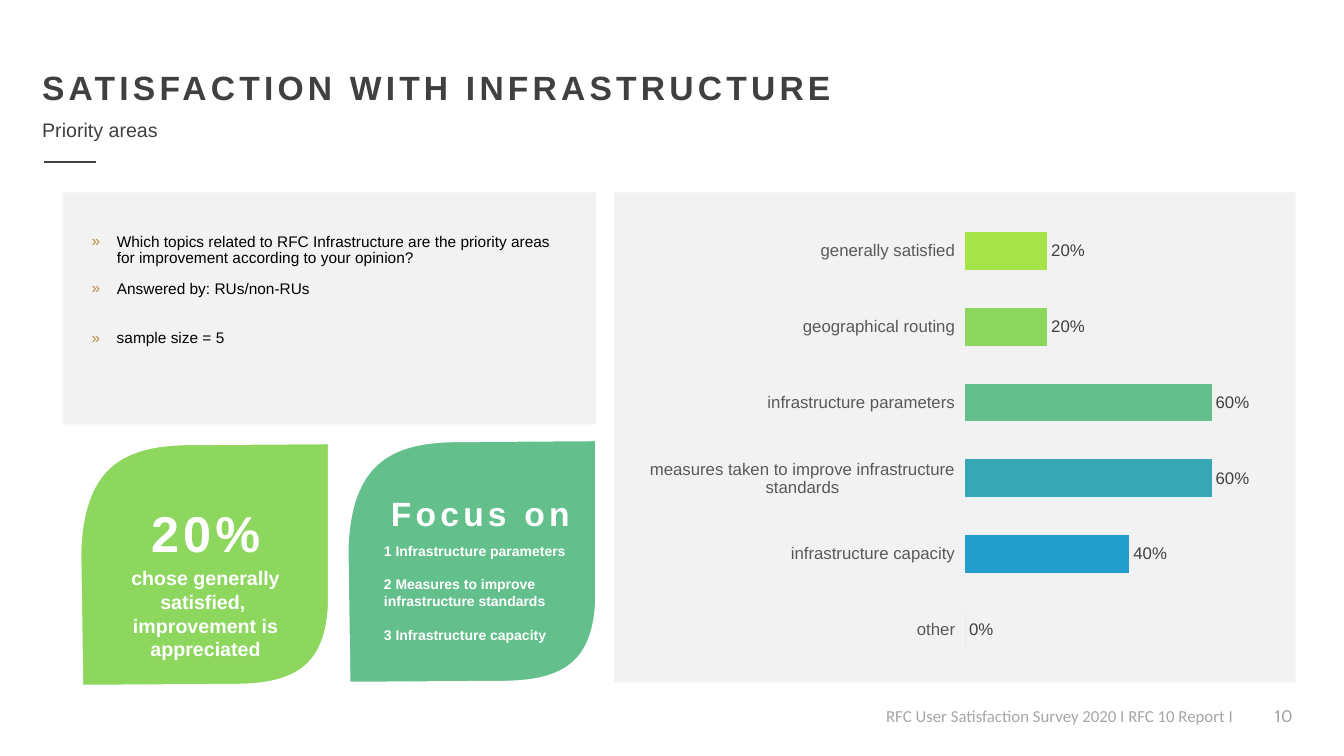
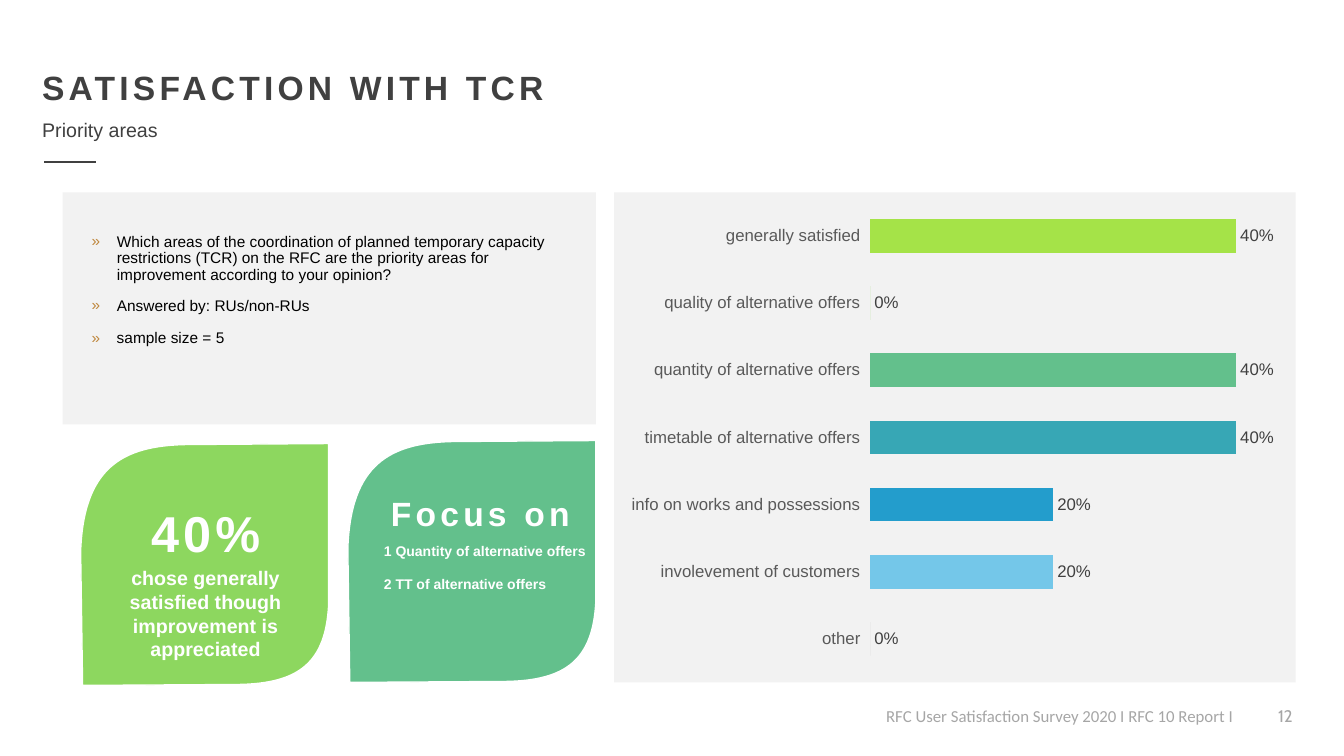
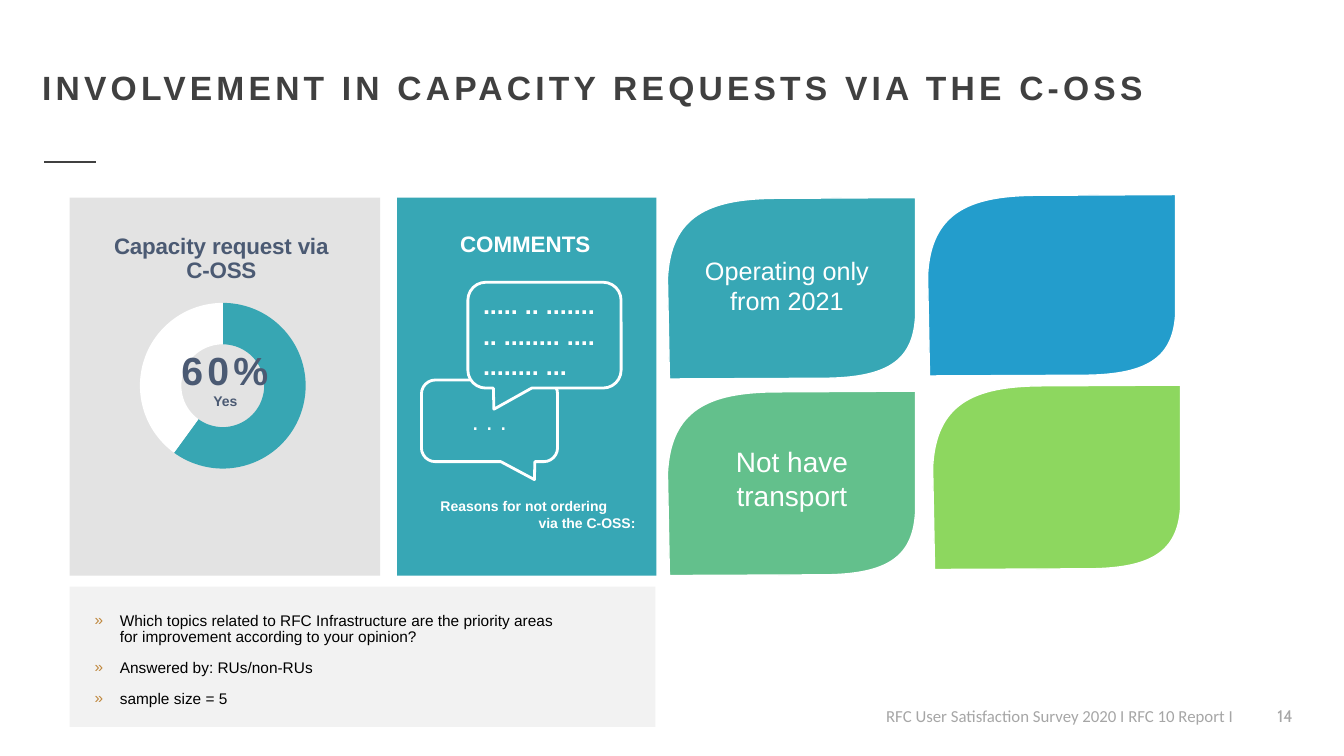
from dataclasses import dataclass

from lxml import etree
from pptx import Presentation
from pptx import util as u
from pptx.chart.data import CategoryChartData
from pptx.dml.color import RGBColor
from pptx.enum import chart as charts, shapes, text
from pptx.oxml import parse_xml
from pptx.oxml.ns import nsdecls, qn

PX = 9144


@dataclass(frozen=True)
class Theme:
    font: str = "Arial"
    footer_font: str = "Calibri"
    number_font: str = "Cabin"
    white: str = "FFFFFF"
    black: str = "000000"
    ink: str = "404040"
    axis: str = "595959"
    muted: str = "A6A6A6"
    slate: str = "4B5A73"
    panel: str = "F2F2F2"
    grey_panel: str = "E3E3E3"
    bullet: str = "BF873D"
    lime: str = "A5E348"
    green: str = "8DD75F"
    jade: str = "63C08C"
    teal: str = "37A7B5"
    blue: str = "239DCC"
    sky: str = "74C7E9"
    silver: str = "BFBFBF"
    yes: str = "37A6B3"
    huge: int = 36
    big: int = 28
    title: int = 24
    note: int = 20
    comment: int = 18
    heading: int = 16
    body: int = 14
    label: int = 12
    bullet_size: int = 11
    small: int = 10


THEME = Theme()
LEFT = text.PP_ALIGN.LEFT
CENTER = text.PP_ALIGN.CENTER
RIGHT = text.PP_ALIGN.RIGHT
FOOTER = "RFC User Satisfaction Survey 2020 I RFC 10 Report I"
ANSWERED_BY = "Answered by: RUs/non-RUs"
SAMPLE = "sample size = 5"
INFRASTRUCTURE_QUESTION = (
    "Which topics related to RFC Infrastructure are the priority areas "
    "for improvement according to your opinion?"
)

PRIORITY_SLIDES = [
    {
        "number": 10,
        "title": "SATISFACTION WITH INFRASTRUCTURE",
        "title_width": 844,
        "question": INFRASTRUCTURE_QUESTION,
        "share": "20%",
        "verdict": "chose generally satisfied, \vimprovement is appreciated",
        "focus": [
            "1 Infrastructure parameters",
            "2 Measures to improve\vinfrastructure standards",
            "3 Infrastructure capacity",
        ],
        "focus_box": (371, 533, 202, 111),
        "chart_box": (632, 202, 623, 470),
        "axis_max": 0.7,
        "bars": [
            ("generally satisfied", 0.2, THEME.lime),
            ("geographical routing", 0.2, THEME.green),
            ("infrastructure parameters", 0.6, THEME.jade),
            ("measures taken to improve infrastructure standards", 0.6, THEME.teal),
            ("infrastructure capacity", 0.4, THEME.blue),
            ("other", 0, THEME.silver),
        ],
    },
    {
        "number": 12,
        "title": "SATISFACTION WITH TCR",
        "title_width": 1167,
        "question": "Which areas of the coordination of planned temporary capacity "
                    "restrictions (TCR) on the RFC are the priority areas for "
                    "improvement according to your opinion?",
        "share": "40%",
        "verdict": "chose generally satisfied though improvement is appreciated",
        "focus": ["1 Quantity of alternative offers", "2 TT of alternative offers"],
        "focus_box": (371, 533, 222, 77),
        "chart_box": (613, 191, 672, 486),
        "axis_max": 0.45,
        "bars": [
            ("generally satisfied", 0.4, THEME.lime),
            ("quality of alternative offers", 0, THEME.green),
            ("quantity of alternative offers", 0.4, THEME.jade),
            ("timetable of alternative offers", 0.4, THEME.teal),
            ("info on works and possessions", 0.2, THEME.blue),
            ("involevement of customers", 0.2, THEME.sky),
            ("other", 0, THEME.silver),
        ],
    },
]

INVOLVEMENT = {
    "number": 14,
    "title": "INVOLVEMENT IN CAPACITY REQUESTS VIA THE C-OSS",
    "title_width": 1213,
    "doughnut_title": "Capacity request via\nC-OSS",
    "answers": [("1", 60, THEME.yes), ("2", 40, THEME.white)],
    "leaves": [
        ((925, 382, 246, 183), THEME.green),
        ((662, 388, 246, 183), THEME.jade),
        ((662, 196, 246, 180), THEME.teal),
        ((920, 193, 246, 180), THEME.blue),
    ],
    "reasons": [
        ("Not have transport", (671, 436, 229, 77), THEME.note),
        ("Operating only from 2021", (666, 248, 229, 71), THEME.comment),
    ],
    "callouts": [
        (". . .", (418, 377, 135, 81), (0.33, 0.72, 0.17), CENTER, False),
        ("..... .. .......\v.. ........ ....\v........ ...",
         (464, 280, 152, 105), (-0.33, 0.7, 0.17), LEFT, True),
    ],
}

LEAF_UNIT = 1000
LEAF_OUTLINE = [
    (8, 1000), (0, 446), (12, 100), (167, 8), (429, 4),
    (1000, 0), (1000, 667), (988, 904), (882, 992), (637, 996),
]
LEAF_CURVE_STARTS = (1, 6)


def emu(box):
    return [value * PX for value in box]


def color(value):
    return RGBColor.from_string(value)


def style_font(font, size, shade, bold=False, name=THEME.font):
    font.name = name
    font.size = u.Pt(size)
    font.bold = bold
    font.color.rgb = color(shade)


def write(frame, lines, size, shade, bold=False, align=None, name=THEME.font,
          tracking=0, gap=0, leading=None):
    for index, line in enumerate(lines):
        paragraph = frame.paragraphs[0] if index == 0 else frame.add_paragraph()
        paragraph.text = line
        paragraph.alignment = align
        if leading:
            paragraph.line_spacing = leading
        if gap and index:
            paragraph.space_before = u.Pt(gap)
        style_font(paragraph.font, size, shade, bold, name)
        if tracking:
            paragraph.font._rPr.set("spc", str(tracking * 100))


def add_text(slide, box, lines, size, shade, wrap=True, **options):
    frame = slide.shapes.add_textbox(*emu(box)).text_frame
    frame.word_wrap = wrap
    write(frame, lines, size, shade, **options)
    return frame


def add_bullets(slide, box, lines):
    frame = add_text(slide, box, lines, THEME.bullet_size, THEME.black, leading=0.9)
    for paragraph in frame.paragraphs:
        paragraph.space_before = u.Pt(10)
        properties = paragraph._p.get_or_add_pPr()
        properties.set("marL", str(25 * PX))
        properties.set("indent", str(-25 * PX))
        defaults = properties.find(qn("a:defRPr"))
        for xml in (
            f'<a:buClr {nsdecls("a")}><a:srgbClr val="{THEME.bullet}"/></a:buClr>',
            f'<a:buFont {nsdecls("a")} typeface="{THEME.font}"/>',
            f'<a:buChar {nsdecls("a")} char="»"/>',
        ):
            defaults.addprevious(parse_xml(xml))


def paint(shape, fill, line=None, width=1):
    shape.shadow.inherit = False
    shape.fill.solid()
    shape.fill.fore_color.rgb = color(fill)
    if line:
        shape.line.color.rgb = color(line)
        shape.line.width = u.Pt(width)
    else:
        shape.line.fill.background()


def add_panel(slide, box, fill):
    paint(slide.shapes.add_shape(shapes.MSO_SHAPE.RECTANGLE, *emu(box)), fill)


def add_leaf(slide, box, fill):
    left, top, width, height = emu(box)
    turned_left = left + (width - height) / 2
    turned_top = top + (height - width) / 2
    points = [(turned_left + (1 - y / LEAF_UNIT) * height,
               turned_top + x / LEAF_UNIT * width) for x, y in LEAF_OUTLINE]
    builder = slide.shapes.build_freeform(*points[0])
    builder.add_line_segments(points[1:], close=True)
    leaf = builder.convert_to_shape()
    segments = list(leaf._element.iter(qn("a:lnTo")))
    for start in LEAF_CURVE_STARTS:
        controls = segments[start:start + 3]
        curve = etree.Element(qn("a:cubicBezTo"))
        controls[0].addprevious(curve)
        for segment in controls:
            curve.append(segment[0])
            segment.getparent().remove(segment)
    leaf.rotation = 270
    paint(leaf, fill, THEME.white)


def add_chart(slide, kind, box, rows, number_format):
    data = CategoryChartData(number_format=number_format)
    data.categories = [name for name, _, _ in rows]
    data.add_series("Series 1", [value for _, value, _ in rows])
    chart = slide.shapes.add_chart(kind, *emu(box), data).chart
    chart.has_legend = False
    chart.has_title = False
    style_font(chart.font, THEME.small, THEME.black)
    plot = chart.plots[0]
    plot.vary_by_categories = False
    for index, (_, _, shade) in enumerate(rows):
        fill = plot.series[0].points[index].format.fill
        fill.solid()
        fill.fore_color.rgb = color(shade)
    return chart


def add_bar_chart(slide, box, rows, axis_max):
    chart = add_chart(slide, charts.XL_CHART_TYPE.BAR_CLUSTERED, box, rows, "0%")
    plot = chart.plots[0]
    plot.gap_width = 100
    plot.has_data_labels = True
    labels = plot.data_labels
    labels.show_value = True
    labels.position = charts.XL_LABEL_POSITION.OUTSIDE_END
    labels.number_format = "0%"
    labels.number_format_is_linked = False
    style_font(labels.font, THEME.label, THEME.ink)
    categories = chart.category_axis
    categories.reverse_order = True
    categories.format.line.fill.background()
    style_font(categories.tick_labels.font, THEME.label, THEME.axis)
    values = chart.value_axis
    values.has_major_gridlines = False
    values.minimum_scale = 0
    values.maximum_scale = axis_max
    values.visible = False


def set_layout(parent, before, inner=False, **fractions):
    for old in parent.findall(qn("c:layout")):
        parent.remove(old)
    layout = etree.Element(qn("c:layout"))
    manual = etree.SubElement(layout, qn("c:manualLayout"))
    settings = {"layoutTarget": "inner"} if inner else {}
    settings.update(xMode="edge", yMode="edge", **fractions)
    for name, value in settings.items():
        etree.SubElement(manual, qn(f"c:{name}")).set("val", str(value))
    parent.find(qn(before)).addprevious(layout)


def add_doughnut(slide, box, title, rows):
    chart = add_chart(slide, charts.XL_CHART_TYPE.DOUGHNUT, box, rows, "General")
    chart.has_title = True
    write(chart.chart_title.text_frame, title.split("\n"), THEME.heading,
          THEME.slate, bold=True)
    chart.chart_title.include_in_layout = False
    set_layout(chart.chart_title._element, "c:overlay", x=0.14, y=0.04)
    doughnut = chart.plots[0]._element
    doughnut.find(qn("c:holeSize")).set("val", "90")
    set_layout(doughnut.getparent(), "c:doughnutChart", inner=True,
               x=0.23, y=0.32, w=0.54, h=0.63)


def add_slide(presentation, content):
    slide = presentation.slides.add_slide(presentation.slide_layouts[6])
    add_text(slide, (1230, 695, 62, 40), [str(content["number"])], THEME.label,
             THEME.muted, align=RIGHT, name=THEME.number_font)
    add_text(slide, (869, 695, 385, 30), [FOOTER], THEME.label, THEME.muted,
             wrap=False, name=THEME.footer_font)
    rule = slide.shapes.add_connector(
        shapes.MSO_CONNECTOR.STRAIGHT, *emu((44, 161, 95, 161)))
    rule.line.color.rgb = color(THEME.ink)
    rule.line.width = u.Pt(1.5)
    etree.SubElement(rule._element.spPr, qn("a:effectLst"))
    add_text(slide, (32, 61, content["title_width"], 50), [content["title"]],
             THEME.title, THEME.ink, bold=True, tracking=3)
    return slide


def add_priority_slide(presentation, content):
    slide = add_slide(presentation, content)
    add_text(slide, (32, 112, 136, 34), ["Priority areas"], THEME.body, THEME.ink,
             wrap=False)
    add_panel(slide, (62, 191, 529, 230), THEME.panel)
    add_panel(slide, (609, 191, 676, 486), THEME.panel)
    add_bullets(slide, (81, 227, 495, 82), [content["question"], ANSWERED_BY])
    add_bullets(slide, (81, 323, 227, 33), [SAMPLE])
    add_leaf(slide, (80, 440, 246, 240), THEME.green)
    add_leaf(slide, (345, 437, 246, 240), THEME.jade)
    add_text(slide, (137, 493, 134, 71), [content["share"]], THEME.huge, THEME.white,
             wrap=False, bold=True, align=CENTER, tracking=3)
    add_text(slide, (81, 557, 246, 104), [content["verdict"]], THEME.body, THEME.white,
             bold=True, align=CENTER)
    add_text(slide, (375, 484, 203, 50), ["Focus on"], THEME.title, THEME.white,
             wrap=False, bold=True, align=CENTER, tracking=3)
    add_text(slide, content["focus_box"], content["focus"], THEME.small, THEME.white,
             wrap=False, bold=True, gap=12)
    add_bar_chart(slide, content["chart_box"], content["bars"], content["axis_max"])


def add_involvement_slide(presentation, content):
    slide = add_slide(presentation, content)
    add_panel(slide, (69, 196, 308, 375), THEME.grey_panel)
    add_doughnut(slide, (67, 217, 308, 261), content["doughnut_title"],
                 content["answers"])
    add_text(slide, (167, 339, 112, 57), ["60%"], THEME.big, THEME.slate,
             wrap=False, bold=True, align=CENTER, tracking=3)
    add_text(slide, (201, 384, 45, 27), ["Yes"], THEME.small, THEME.slate,
             wrap=False, bold=True, align=CENTER)
    for box, fill in content["leaves"]:
        add_leaf(slide, box, fill)
    for reason, box, size in content["reasons"]:
        add_text(slide, box, [reason], size, THEME.white, align=CENTER)
    add_panel(slide, (394, 196, 257, 375), THEME.teal)
    add_text(slide, (393, 223, 256, 37), ["COMMENTS"], THEME.heading, THEME.white,
             bold=True, align=CENTER)
    for dots, box, adjustments, align, bold in content["callouts"]:
        callout = slide.shapes.add_shape(
            shapes.MSO_SHAPE.ROUNDED_RECTANGULAR_CALLOUT, *emu(box))
        for index, value in enumerate(adjustments):
            callout.adjustments[index] = value
        paint(callout, THEME.teal, THEME.white, 2)
        callout.text_frame.vertical_anchor = text.MSO_ANCHOR.MIDDLE
        write(callout.text_frame, [dots], THEME.comment, THEME.white, bold=bold,
              align=align)
    caption = add_text(slide, (399, 489, 241, 44),
                       ["Reasons for not ordering", "via the C-OSS:"],
                       THEME.small, THEME.white, bold=True, align=CENTER)
    caption.paragraphs[1].alignment = RIGHT
    add_panel(slide, (69, 582, 581, 139), THEME.panel)
    add_bullets(slide, (84, 603, 495, 118),
                [INFRASTRUCTURE_QUESTION, ANSWERED_BY, SAMPLE])


def main():
    presentation = Presentation()
    presentation.slide_width, presentation.slide_height = emu((1333, 750))
    for content in PRIORITY_SLIDES:
        add_priority_slide(presentation, content)
    add_involvement_slide(presentation, INVOLVEMENT)
    presentation.save("out.pptx")


if __name__ == "__main__":
    main()
